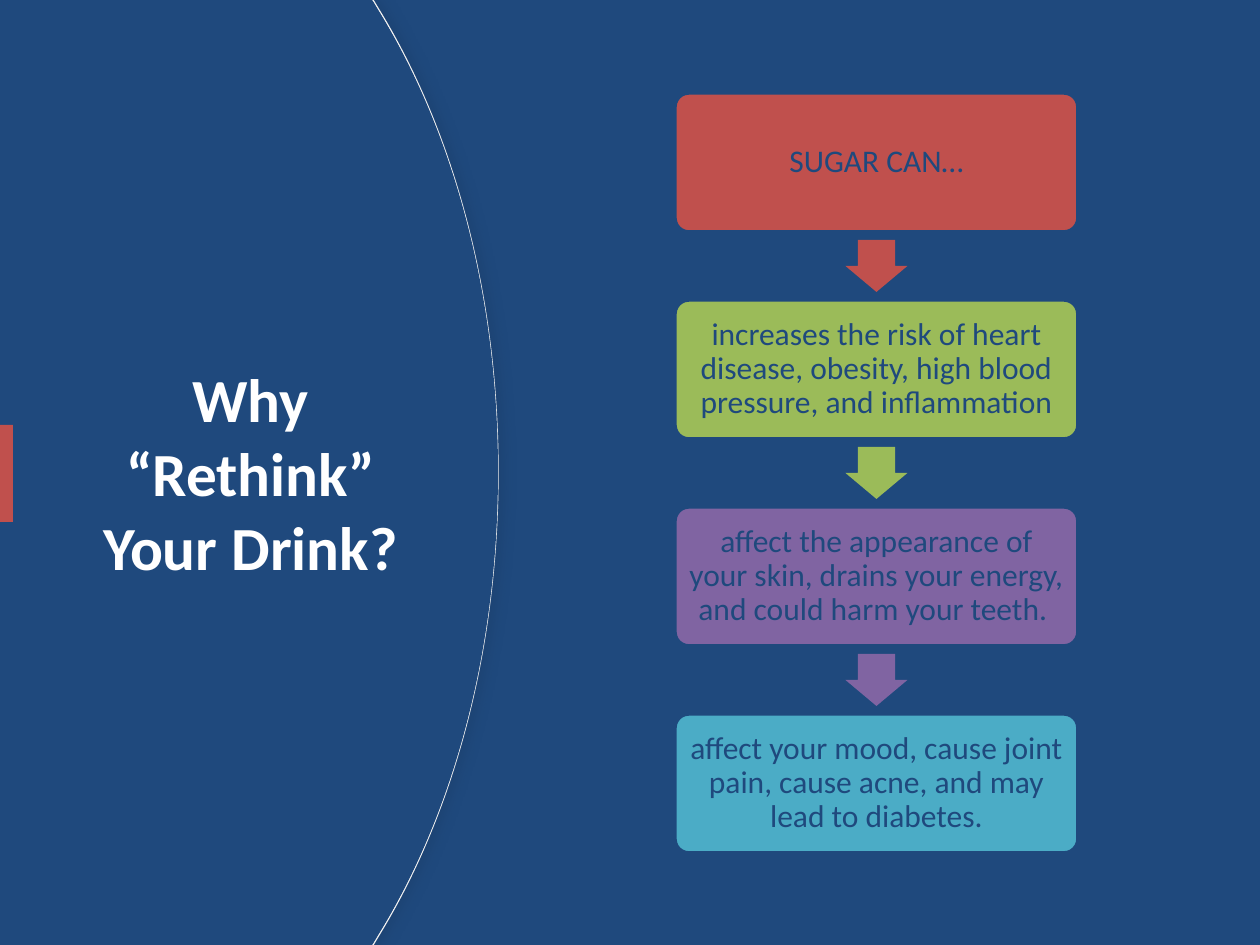
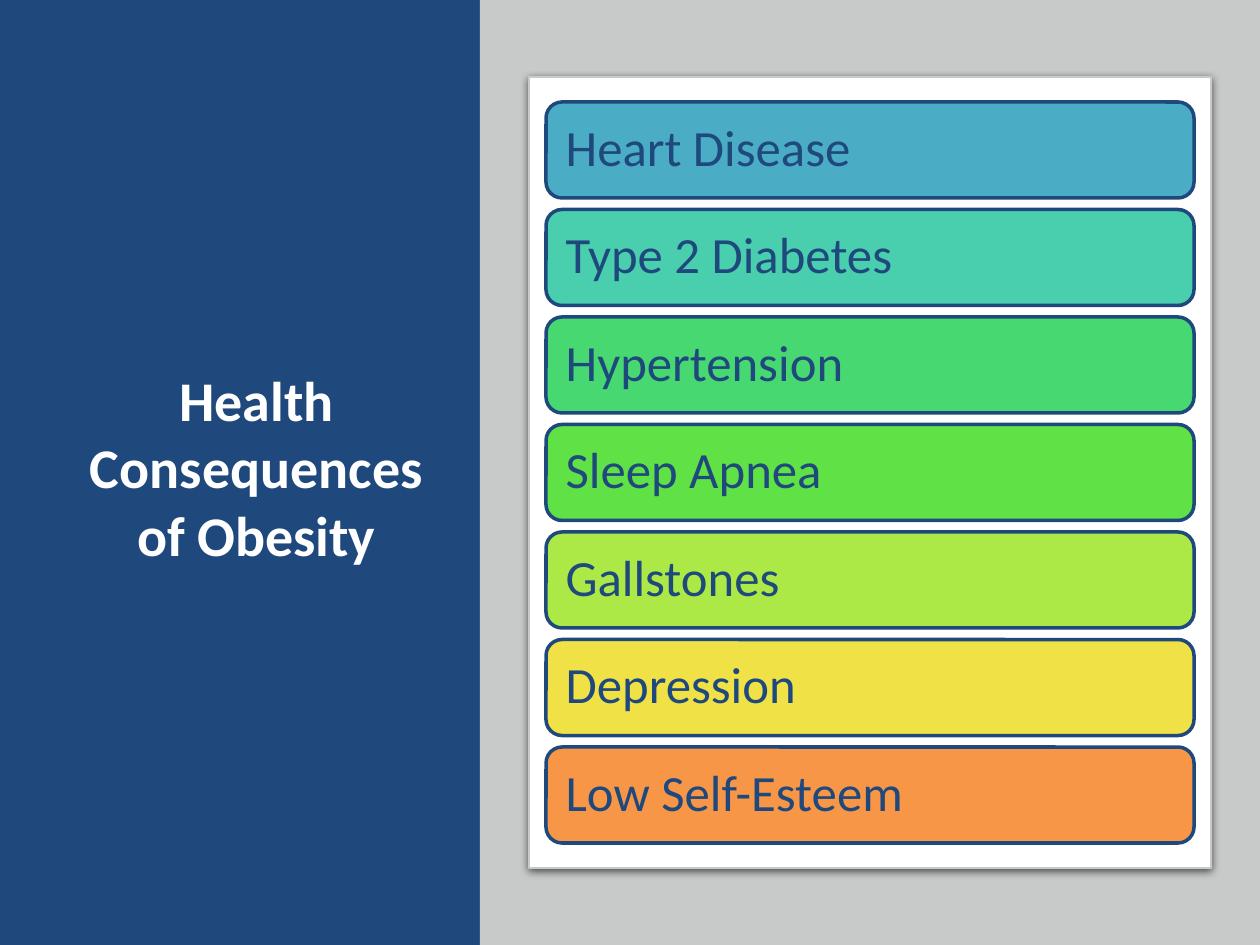
from dataclasses import dataclass

from lxml.etree import SubElement
from pptx import Presentation
from pptx.dml.color import RGBColor
from pptx.enum.shapes import MSO_SHAPE
from pptx.enum.text import MSO_ANCHOR, PP_ALIGN
from pptx.oxml.ns import qn
from pptx.util import Pt

PX = 914400 / 126
PAGE_WIDTH, PAGE_HEIGHT = 1260, 945


@dataclass(frozen=True)
class Theme:
    font: str = "Calibri"
    navy: str = "1F497D"
    white: str = "FFFFFF"
    grey: str = "C8CACA"
    curve: str = "EFEFEF"
    curve_shadow: str = "1A3E6A"
    black: str = "000000"
    red: str = "C0504D"
    green: str = "9BBB59"
    purple: str = "8064A2"
    aqua: str = "4BACC6"
    bars: tuple = ("4BACC6", "49CFAE", "47D872", "60E146", "ACE946", "F0E146", "F79646")
    question_size: int = 35
    heading_size: int = 32
    card_size: int = 18
    bar_size: int = 29


THEME = Theme()

SUGAR_EFFECTS = (
    ("SUGAR CAN…", THEME.red),
    ("increases the risk of heart disease, obesity, high blood pressure, "
     "and inflammation", THEME.green),
    ("affect the appearance of your skin, drains your energy, "
     "and could harm your teeth. ", THEME.purple),
    ("affect your mood, cause joint pain, cause acne, "
     "and may lead to diabetes.", THEME.aqua),
)
CONSEQUENCES = ("Heart Disease", "Type 2 Diabetes", "Hypertension", "Sleep Apnea",
                "Gallstones", "Depression", "Low Self-Esteem")


def emu(pixels):
    return round(pixels * PX)


def paint(shape, fill, line=None, line_width=2):
    shape.shadow.inherit = False
    shape.fill.solid()
    shape.fill.fore_color.rgb = RGBColor.from_string(fill)
    if line:
        shape.line.color.rgb = RGBColor.from_string(line)
        shape.line.width = Pt(line_width)
    else:
        shape.line.fill.background()


def cast_shadow(shape, color, opacity, blur, distance, angle):
    """Give a painted shape an outer shadow; blur and distance are in points."""
    effects = shape._element.spPr.find(qn("a:effectLst"))
    shadow = SubElement(effects, qn("a:outerShdw"), blurRad=str(Pt(blur)),
                        dist=str(Pt(distance)), dir=str(angle * 60000), rotWithShape="0")
    tint = SubElement(shadow, qn("a:srgbClr"), val=color)
    SubElement(tint, qn("a:alpha"), val=str(opacity * 1000))


def add_block(page, kind, box, fill, line=None, line_width=2):
    shape = page.shapes.add_shape(kind, *map(emu, box))
    paint(shape, fill, line, line_width)
    return shape


def write(shape, text, size, color, align, bold=False, spacing=1.0, inset=None):
    frame = shape.text_frame
    frame.word_wrap = True
    frame.vertical_anchor = MSO_ANCHOR.MIDDLE
    if inset is not None:
        frame.margin_left = frame.margin_right = emu(inset)
        frame.margin_top = frame.margin_bottom = emu(inset)
    para = frame.paragraphs[0]
    para.alignment = align
    para.line_spacing = spacing
    span = para.add_run()
    span.text = text
    span.font.name = THEME.font
    span.font.size = Pt(size)
    span.font.bold = bold
    span.font.color.rgb = RGBColor.from_string(color)


def add_title(page, box, text, size):
    title = page.shapes.add_textbox(*map(emu, box))
    write(title, text, size, THEME.white, PP_ALIGN.CENTER, bold=True)


def stack(box, count, height):
    """Split a box into equally spaced rows of the given height."""
    left, top, width, total = box
    pitch = (total - height) / (count - 1)
    return [(left, top + index * pitch, width, height) for index in range(count)]


def bend_lines(shape, first):
    """Merge three line segments, from index first on, into one Bézier curve."""
    segments = list(shape._element.iter(qn("a:lnTo")))[first:first + 3]
    curve = segments[0].makeelement(qn("a:cubicBezTo"))
    segments[0].addprevious(curve)
    for segment in segments:
        curve.append(segment[0])
        segment.getparent().remove(segment)


def add_curved_panel(page, box):
    """Outlined panel with a plain one on top that hides the inner half of the line."""
    left, top, width, height = box
    for edge, line in ((373, THEME.curve), (372, None)):
        upper = [(edge, 0), (edge + 6, 10), (width - 46, 129), (width, 292)]
        lower = [(x, height - y) for x, y in reversed(upper)]
        builder = page.shapes.build_freeform(0, 0, scale=PX)
        builder.add_line_segments(upper + [(width, height // 2)] + lower + [(0, height)])
        panel = builder.convert_to_shape(emu(left), emu(top))
        bend_lines(panel, 5)
        bend_lines(panel, 2)
        paint(panel, THEME.navy, line, 0.75)
        if line:
            cast_shadow(panel, THEME.curve_shadow, 50, 7, 3, 0)


def add_effect_chain(page, box):
    card_height, arrow_width, arrow_height = 139, 62, 52
    cards = stack(box, len(SUGAR_EFFECTS), card_height)
    for (text, color), card_box in zip(SUGAR_EFFECTS, cards):
        card = add_block(page, MSO_SHAPE.ROUNDED_RECTANGLE, card_box, color, THEME.navy)
        card.adjustments[0] = 0.1
        write(card, text, THEME.card_size, THEME.navy, PP_ALIGN.CENTER, spacing=0.9, inset=9)
    gap = cards[1][1] - cards[0][1] - card_height
    for (_, color), (left, top, width, height) in zip(SUGAR_EFFECTS[:-1], cards):
        arrow_box = (left + (width - arrow_width) / 2,
                     top + height + (gap - arrow_height) / 2, arrow_width, arrow_height)
        arrow = add_block(page, MSO_SHAPE.DOWN_ARROW, arrow_box, color)
        arrow.adjustments[0] = 0.6
        arrow.adjustments[1] = 0.5


def add_consequence_list(page, box):
    left, top, width, height = box
    frame = add_block(page, MSO_SHAPE.RECTANGLE, box, THEME.white, THEME.grey, 0.75)
    cast_shadow(frame, THEME.black, 63, 4.5, 1.5, 90)
    rows = stack((left + 17, top + 25, width - 34, height - 50), len(CONSEQUENCES), 96)
    for text, color, row in zip(CONSEQUENCES, THEME.bars, rows):
        bar = add_block(page, MSO_SHAPE.ROUNDED_RECTANGLE, row, color, THEME.navy)
        write(bar, text, THEME.bar_size, THEME.navy, PP_ALIGN.LEFT, spacing=0.9, inset=15)


def add_page(deck):
    page = deck.slides.add_slide(deck.slide_layouts[6])
    page.background.fill.solid()
    page.background.fill.fore_color.rgb = RGBColor.from_string(THEME.navy)
    return page


def build_rethink_page(deck):
    page = add_page(deck)
    add_curved_panel(page, (0, 0, 498, PAGE_HEIGHT))
    add_title(page, (64, 160, 373, 624), "Why “Rethink” Your Drink?", THEME.question_size)
    add_block(page, MSO_SHAPE.RECTANGLE, (0, 425, 13, 97), THEME.red)
    add_effect_chain(page, (675, 93, 403, 760))


def build_obesity_page(deck):
    page = add_page(deck)
    add_title(page, (67, 87, 379, 759), "Health Consequences of Obesity", THEME.heading_size)
    add_block(page, MSO_SHAPE.RECTANGLE, (480, 0, PAGE_WIDTH - 480, PAGE_HEIGHT), THEME.grey)
    add_consequence_list(page, (529, 77, 682, 791))


def main():
    deck = Presentation()
    deck.slide_width, deck.slide_height = emu(PAGE_WIDTH), emu(PAGE_HEIGHT)
    build_rethink_page(deck)
    build_obesity_page(deck)
    deck.save("out.pptx")


if __name__ == "__main__":
    main()
